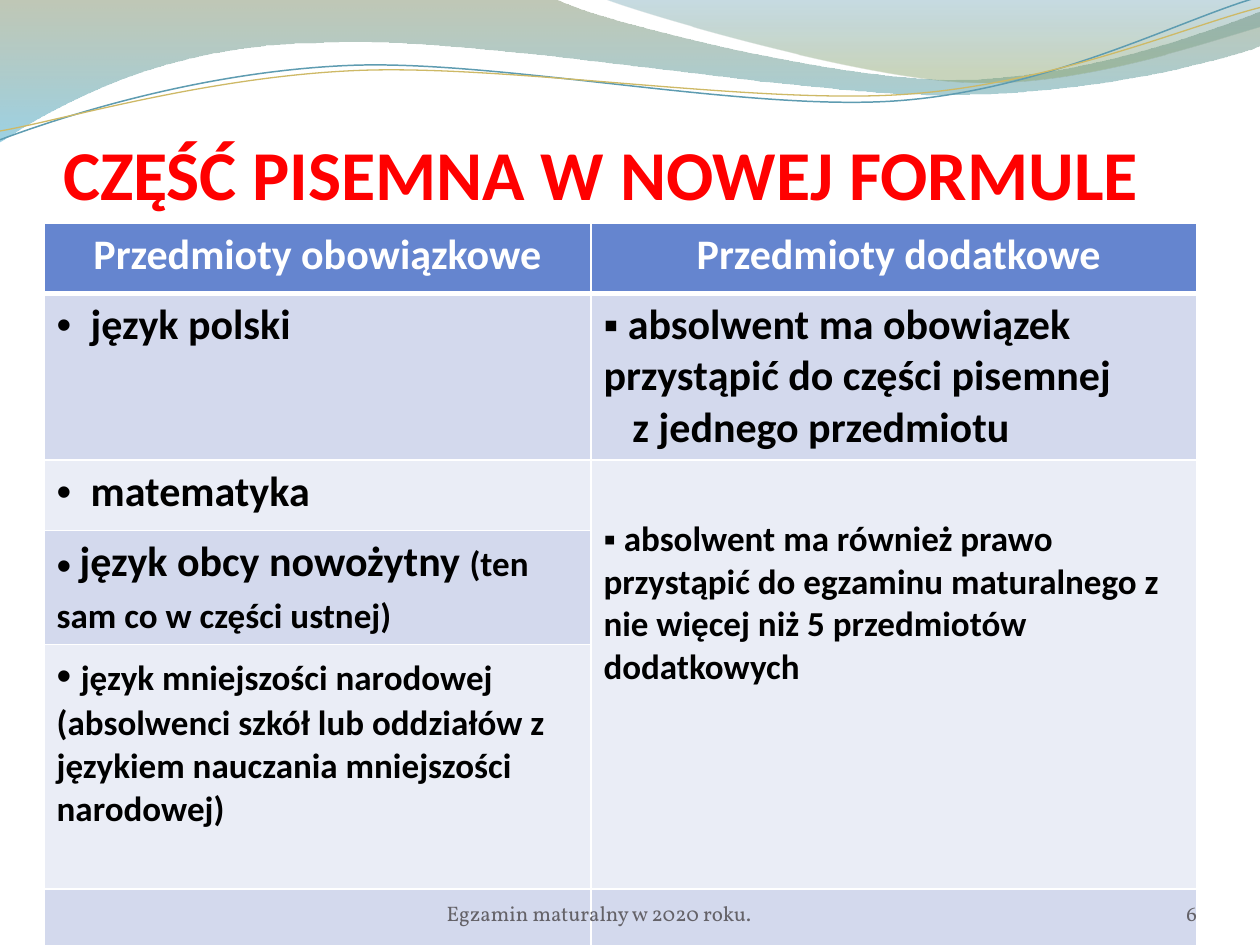
import pptx
import pptx.util
import pptx.dml.color
import pptx.enum.text
import pptx.oxml.ns
from lxml import etree

Inches, Pt = pptx.util.Inches, pptx.util.Pt
ALIGN, ANCHOR = pptx.enum.text.PP_ALIGN, pptx.enum.text.MSO_ANCHOR
qn = pptx.oxml.ns.qn

COLORS = {"title": "FF0000", "header": "6585CF", "dark": "D3D9ED", "light": "EAEDF6",
          "white": "FFFFFF", "black": "000000", "footer": "646268"}
BODY, SERIF, BULLET = "Calibri", "Vollkorn", "Arial"

TITLE = "CZĘŚĆ PISEMNA W NOWEJ FORMULE"
FOOTER = "Egzamin maturalny w 2020 roku."
PAGE = "6"
HEADERS = ["Przedmioty obowiązkowe", " Przedmioty dodatkowe"]
COLS = [4.34, 4.81]
ROWS = [0.56, 1.32, 0.56, 0.9, 1.94, 0.45]
FILLS = ["header", "dark", "light", "dark", "light", "dark"]
CELLS = {
    (1, 0): [dict(runs=[("język polski", {})], bullet="•", left=0.27, indent=-0.27)],
    (2, 0): [dict(runs=[("matematyka", {})], bullet="•", left=0.27, indent=-0.27)],
    (3, 0): [dict(runs=[(" ", {"font": SERIF}), ("język obcy nowożytny ", {}),
                        ("(ten sam co w części ustnej)", {"size": 20})], bullet="•")],
    (4, 0): [dict(runs=[(" ", {}),
                        ("język mniejszości narodowej (absolwenci szkół lub oddziałów z "
                         "językiem nauczania mniejszości narodowej)", {"size": 20})], bullet="•")],
    (1, 1): [dict(runs=[(" absolwent ma obowiązek przystąpić do części pisemnej", {})], bullet="▪"),
             dict(runs=[("z jednego przedmiotu", {})], left=0.23)],
    (2, 1): [dict(runs=[(" absolwent ma również prawo przystąpić do egzaminu maturalnego z "
                         "nie więcej niż 5 przedmiotów dodatkowych", {"size": 20})], bullet="▪")],
}

BANDS = [
    ([[(0, -0.01)], [(4.4, -0.01)],
      [(4.76, 0.17), (6.64, 0.63), (7.58, 0.63)], [(8.53, 0.63), (9.58, 0.26), (10, 0.09)],
      [(10.01, 0.36)], [(9.83, 0.44), (8.7, 0.76), (7.46, 0.75)],
      [(6.22, 0.75), (3.82, 0.28), (2.57, 0.34)], [(1.29, 0.35), (0.46, 0.83), (-0.01, 1.13)]],
     [(0, "74855E", 45), (1, "4AACCE", 55)]),
    ([[(4.79, -0.01)], [(5.09, 0.11), (6.82, 0.62), (7.69, 0.65)],
      [(8.56, 0.69), (9.61, 0.32), (10, 0.21)], [(10, 0)]],
     [(0, "45889F", 30), (0.8, "8AA36D", 45)]),
]
WAVES = [
    ([[(0, 1.11)], [(0.48, 0.93), (1.58, 0.57), (2.77, 0.52)],
      [(3.95, 0.47), (5.93, 0.89), (7.13, 0.8)], [(8.33, 0.71), (9.38, 0.15), (9.98, -0.02)]],
     "5E9CB1", 0.85),
    ([[(0, 1.04)], [(0.47, 0.96), (1.64, 0.61), (2.83, 0.56)],
      [(4.03, 0.51), (5.97, 0.83), (7.17, 0.75)], [(8.36, 0.67), (9.41, 0.21), (10, 0.06)]],
     "CEB966", 0.75),
]


def rgb(value):
    return pptx.dml.color.RGBColor.from_string(value)


def write(p, text, size=24, font=BODY, color="black", bold=True):
    r = p.add_run()
    r.text = text
    r.font.size, r.font.name, r.font.bold = Pt(size), font, bold
    r.font.color.rgb = rgb(COLORS[color])


def bend(sp, segments):
    lines = iter(list(sp._element.iter(qn("a:lnTo"))))
    for seg in segments[1:]:
        nodes = [next(lines) for _ in seg]
        if len(nodes) == 3:
            curve = etree.Element(qn("a:cubicBezTo"))
            nodes[0].addprevious(curve)
            for node in nodes:
                curve.append(node[0])
                node.getparent().remove(node)


def outline(s, segments, close):
    points = [(Inches(x), Inches(y)) for seg in segments for x, y in seg]
    builder = s.shapes.build_freeform(*points[0], scale=1.0)
    builder.add_line_segments(points[1:], close=close)
    sp = builder.convert_to_shape()
    bend(sp, segments)
    sp.shadow.inherit = False
    return sp


def add_background(s):
    for segments, stops in BANDS:
        sp = outline(s, segments, True)
        sp.line.fill.background()
        sp.fill.gradient()
        sp.fill.gradient_angle = 270
        for stop, (position, color, _) in zip(sp.fill.gradient_stops, stops):
            stop.position = position
            stop.color.rgb = rgb(color)
        for node, (_, _, opacity) in zip(sp._element.spPr.iter(qn("a:srgbClr")), stops):
            etree.SubElement(node, qn("a:alpha"), val=str(opacity * 1000))
    for segments, color, width in WAVES:
        sp = outline(s, segments, False)
        sp.fill.background()
        sp.line.color.rgb = rgb(color)
        sp.line.width = Pt(width)


def set_borders(cell, bottom):
    tcPr = cell._tc.get_or_add_tcPr()
    for i, (side, width) in enumerate([("L", 1), ("R", 1), ("T", 1), ("B", bottom)]):
        ln = etree.Element(qn("a:ln" + side), w=str(Pt(width)))
        fill = etree.SubElement(ln, qn("a:solidFill"))
        etree.SubElement(fill, qn("a:srgbClr"), val=COLORS["white"])
        tcPr.insert(i, ln)


def fill_cell(cell, paragraphs):
    tf = cell.text_frame
    for i, item in enumerate(paragraphs):
        p = tf.add_paragraph() if i else tf.paragraphs[0]
        for text, style in item["runs"]:
            write(p, text, **style)
        pPr = p._p.get_or_add_pPr()
        pPr.set("marL", str(Inches(item.get("left", 0))))
        pPr.set("indent", str(Inches(item.get("indent", 0))))
        if "bullet" in item:
            etree.SubElement(pPr, qn("a:buFont"), typeface=BULLET)
            etree.SubElement(pPr, qn("a:buChar"), char=item["bullet"])


def add_subjects(s):
    table = s.shapes.add_table(len(ROWS), len(COLS), Inches(0.35), Inches(1.77),
                               Inches(sum(COLS)), Inches(sum(ROWS))).table
    for column, width in zip(table.columns, COLS):
        column.width = Inches(width)
    for row, height in zip(table.rows, ROWS):
        row.height = Inches(height)
    for r, name in enumerate(FILLS):
        for c in range(len(COLS)):
            cell = table.cell(r, c)
            cell.fill.solid()
            cell.fill.fore_color.rgb = rgb(COLORS[name])
            set_borders(cell, 1 if r else 3)
            fill_cell(cell, CELLS.get((r, c), []))
    for c, text in enumerate(HEADERS):
        p = table.cell(0, c).text_frame.paragraphs[0]
        p.alignment = ALIGN.CENTER
        write(p, text, color="white")
    rights = table.cell(2, 1)
    rights.merge(table.cell(4, 1))
    rights.margin_top = Inches(0.46)


def set_frame(tf, top=0):
    tf.word_wrap = True
    tf.auto_size = pptx.enum.text.MSO_AUTO_SIZE.NONE
    tf.vertical_anchor = ANCHOR.BOTTOM
    tf.margin_left = tf.margin_right = tf.margin_bottom = 0
    tf.margin_top = Inches(top)


def add_title(s):
    sp = s.shapes.title
    sp.left, sp.top, sp.width, sp.height = map(Inches, (0.5, 0.77, 9, 0.93))
    set_frame(sp.text_frame, 0.05)
    p = sp.text_frame.paragraphs[0]
    p.alignment = ALIGN.LEFT
    write(p, TITLE, size=40, color="title")


def add_footer(s):
    for text, left, width, align in [(FOOTER, 2.92, 3.67, ALIGN.CENTER), (PAGE, 8.67, 0.83, ALIGN.RIGHT)]:
        tf = s.shapes.add_textbox(Inches(left), Inches(6.95), Inches(width), Inches(0.4)).text_frame
        set_frame(tf)
        tf.paragraphs[0].alignment = align
        write(tf.paragraphs[0], text, size=12, font=SERIF, color="footer", bold=False)


def main():
    prs = pptx.Presentation()
    prs.slide_width, prs.slide_height = Inches(10), Inches(7.5)
    s = prs.slides.add_slide(prs.slide_layouts[5])
    add_background(s)
    add_title(s)
    add_subjects(s)
    add_footer(s)
    prs.save("out.pptx")


if __name__ == "__main__":
    main()
